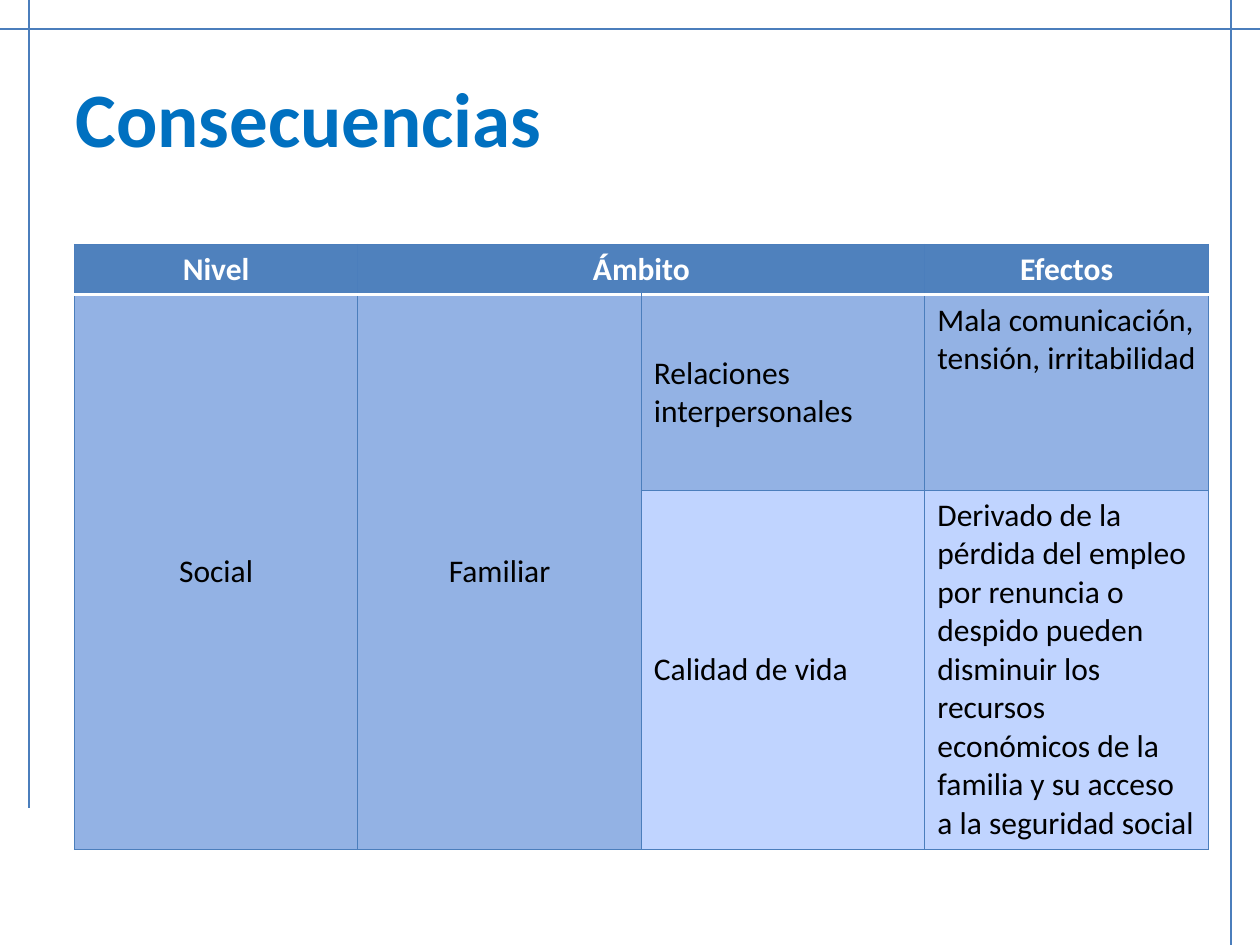
from dataclasses import dataclass

from lxml import etree
from pptx import Presentation
from pptx import util as u
from pptx.dml.color import RGBColor
from pptx.enum import shapes, text
from pptx.oxml.ns import qn


@dataclass(frozen=True)
class Theme:
    font: str = "Calibri"
    title: str = "0070C0"
    line: str = "4B7EBC"
    header: str = "4F81BD"
    band_dark: str = "93B2E4"
    band_light: str = "C0D4FF"
    white: str = "FFFFFF"
    black: str = "000000"
    title_size: int = 44
    body_size: int = 18
    line_width: float = 0.75
    rule_width: float = 2


class SlideBuilder:
    def __init__(self, s, theme):
        self.s = s
        self.theme = theme

    def style(self, p, size, color, bold=False):
        p.font.name = self.theme.font
        p.font.size = u.Pt(size)
        p.font.bold = bold
        p.font.color.rgb = RGBColor.from_string(color)

    def guide(self, x1, y1, x2, y2):
        ends = [u.Inches(v) for v in (x1, y1, x2, y2)]
        sp = self.s.shapes.add_connector(shapes.MSO_CONNECTOR.STRAIGHT, *ends)
        sp.line.color.rgb = RGBColor.from_string(self.theme.line)
        sp.line.width = u.Pt(self.theme.line_width)
        etree.SubElement(sp._element.spPr, qn("a:effectLst"))

    def title(self, words, *box):
        sp = self.s.shapes.add_textbox(*[u.Inches(v) for v in box])
        tf = sp.text_frame
        tf.word_wrap = True
        tf.vertical_anchor = text.MSO_ANCHOR.MIDDLE
        tf.text = words
        self.style(tf.paragraphs[0], self.theme.title_size, self.theme.title, True)

    def border(self, cell, side, color, width):
        tc_pr = cell._tc.get_or_add_tcPr()
        ln = etree.SubElement(tc_pr, qn("a:ln" + side), w=str(u.Pt(width)))
        fill = etree.SubElement(ln, qn("a:solidFill"))
        etree.SubElement(fill, qn("a:srgbClr"), val=color)

    def cell(self, cell, row, col, words):
        t = self.theme
        for side in "LRTB":
            is_rule = (row, side) in ((0, "B"), (1, "T"))
            color, width = (t.white, t.rule_width) if is_rule else (t.line, t.line_width)
            self.border(cell, side, color, width)
        cell.fill.solid()
        fill = (t.header, t.band_dark, t.band_light)[row]
        cell.fill.fore_color.rgb = RGBColor.from_string(fill)
        if row and col < 3:
            cell.vertical_anchor = text.MSO_ANCHOR.MIDDLE
        cell.text = words
        p = cell.text_frame.paragraphs[0]
        if row == 0 or col < 2:
            p.alignment = text.PP_ALIGN.CENTER
        self.style(p, t.body_size, t.black if row else t.white, row == 0)

    def table(self, rows, heights, merges, left, top, width):
        box = [u.Inches(v) for v in (left, top, width, sum(heights))]
        table = self.s.shapes.add_table(len(rows), len(rows[0]), *box).table
        for column in table.columns:
            column.width = u.Inches(width / len(rows[0]))
        for r, (height, words) in enumerate(zip(heights, rows)):
            table.rows[r].height = u.Inches(height)
            for c, value in enumerate(words):
                self.cell(table.cell(r, c), r, c, value)
        for first, last in merges:
            table.cell(*first).merge(table.cell(*last))


def main():
    prs = Presentation()
    prs.slide_width, prs.slide_height = u.Inches(10), u.Inches(7.5)
    slide = SlideBuilder(prs.slides.add_slide(prs.slide_layouts[6]), Theme())

    slide.guide(0.23, 0, 0.23, 6.41)
    slide.guide(0, 0.23, 10, 0.23)
    slide.guide(9.77, 0, 9.77, 7.5)
    slide.title("Consecuencias", 0.5, 0.3, 9, 1.25)

    rows = [
        ["Nivel", "Ámbito", "", "Efectos"],
        ["Social", "Familiar", "Relaciones interpersonales",
         "Mala comunicación, tensión, irritabilidad"],
        ["", "", "Calidad de vida",
         "Derivado de la pérdida del empleo por renuncia o despido pueden "
         "disminuir los recursos económicos de la familia y su acceso "
         "a la seguridad social"],
    ]
    merges = [((0, 1), (0, 2)), ((1, 0), (2, 0)), ((1, 1), (2, 1))]
    slide.table(rows, [0.4, 1.55, 2.85], merges, 0.59, 1.94, 9)

    prs.save("out.pptx")


if __name__ == "__main__":
    main()
